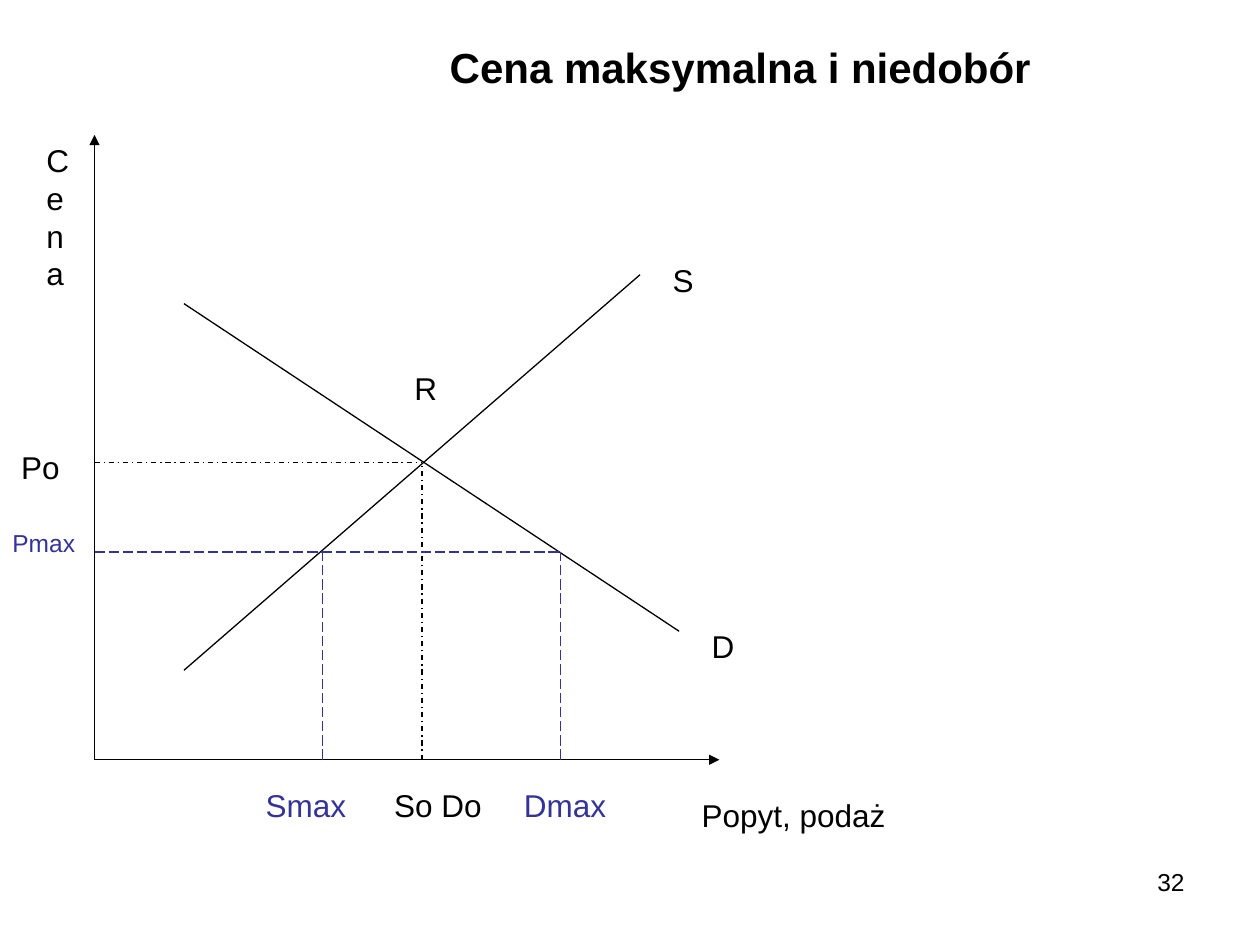
from dataclasses import dataclass

from lxml.etree import SubElement
from pptx import Presentation
from pptx.dml.color import RGBColor
from pptx.enum.dml import MSO_LINE
from pptx.enum.shapes import MSO_CONNECTOR
from pptx.enum.text import MSO_ANCHOR, PP_ALIGN
from pptx.oxml.ns import qn
from pptx.util import Inches, Pt


@dataclass(frozen=True)
class Theme:
    font: str = "Arial"
    ink: str = "000000"
    accent: str = "333399"
    title: int = 24
    body: int = 18
    small: int = 14
    stroke: float = 0.75


THEME = Theme()

# Quantities (x) and prices (y) that the diagram is built on, in inches
ORIGIN_X, ORIGIN_Y = 0.75, 6.03
SUPPLIED, BALANCE, DEMANDED = 2.56, 3.35, 4.45
BALANCE_PRICE, MAX_PRICE = 3.67, 4.38
TICK_TOP, LABEL_HEIGHT = 6.19, 0.4

# Content: start, end of every line
AXES = [
    ((ORIGIN_X, ORIGIN_Y), (ORIGIN_X, 1.07)),
    ((ORIGIN_X, ORIGIN_Y), (5.71, ORIGIN_Y)),
]
CURVES = [
    ((1.46, 5.32), (5.08, 2.18)),  # supply
    ((1.46, 2.41), (5.39, 5.01)),  # demand
]
# Content: price, quantities dropped to the axis, colour, dash
GUIDES = [
    (BALANCE_PRICE, [BALANCE], THEME.ink, MSO_LINE.DASH_DOT),
    (MAX_PRICE, [SUPPLIED, DEMANDED], THEME.accent, MSO_LINE.LONG_DASH),
]
# Content: text, left, top, width, height, colour, size
LABELS = [
    (" Po", 0, 3.51, 0.59, LABEL_HEIGHT, THEME.ink, THEME.body),
    ("Pmax", 0, 4.14, 0.75, 0.33, THEME.accent, THEME.small),
    ("Cena", 0.27, 1.07, 0.32, 1.3, THEME.ink, THEME.body),
    ("Popyt, podaż", 5.47, 6.27, 2.13, LABEL_HEIGHT, THEME.ink, THEME.body),
    ("S", 5.24, 2.02, 0.47, LABEL_HEIGHT, THEME.ink, THEME.body),
    ("D", 5.55, 4.93, 0.55, LABEL_HEIGHT, THEME.ink, THEME.body),
    ("R", 3.19, 2.88, 0.39, LABEL_HEIGHT, THEME.ink, THEME.body),
    ("Smax", 2.01, TICK_TOP, 0.87, LABEL_HEIGHT, THEME.accent, THEME.body),
    ("So Do", 3.03, TICK_TOP, 0.94, LABEL_HEIGHT, THEME.ink, THEME.body),
    ("Dmax", 4.06, TICK_TOP, 1.18, LABEL_HEIGHT, THEME.accent, THEME.body),
]
TITLE = "Cena maksymalna i niedobór"
PAGE_NUMBER = ("32", 7.17, 6.83, 2.33, 0.52, THEME.ink, THEME.small)


def apply(target, formats):
    for name, value in formats.items():
        setattr(target, name, value)


def add_run(paragraph, text, size, color=THEME.ink, bold=False):
    run = paragraph.add_run()
    run.text = text
    apply(run.font, {"name": THEME.font, "size": Pt(size), "bold": bold})
    run.font.color.rgb = RGBColor.from_string(color)


def add_label(slide, text, left, top, width, height, color, size, align=PP_ALIGN.LEFT):
    label = slide.shapes.add_textbox(*map(Inches, (left, top, width, height)))
    label.text_frame.word_wrap = True
    paragraph = label.text_frame.paragraphs[0]
    paragraph.alignment = align
    add_run(paragraph, text, size, color)


def add_line(slide, start, end, color=THEME.ink, dash=None, arrow=False):
    connector = slide.shapes.add_connector(
        MSO_CONNECTOR.STRAIGHT, *map(Inches, (*start, *end)))
    apply(connector.line, {"width": Pt(THEME.stroke), "dash_style": dash})
    connector.line.color.rgb = RGBColor.from_string(color)
    properties = connector._element.spPr
    if arrow:
        SubElement(properties.find(qn("a:ln")), qn("a:tailEnd"), type="triangle")
    SubElement(properties, qn("a:effectLst"))


def add_title(slide):
    title = slide.shapes.title
    apply(title, {"left": Inches(2.8), "top": Inches(0.28),
                  "width": Inches(6.22), "height": Inches(0.5)})
    apply(title.text_frame, {"word_wrap": True, "vertical_anchor": MSO_ANCHOR.TOP})
    paragraph = title.text_frame.paragraphs[0]
    paragraph.alignment = PP_ALIGN.CENTER
    add_run(paragraph, TITLE, THEME.title, bold=True)
    add_run(paragraph, " ", THEME.body)


def main():
    deck = Presentation()
    apply(deck, {"slide_width": Inches(10), "slide_height": Inches(7.5)})
    slide = deck.slides.add_slide(deck.slide_layouts[5])
    add_title(slide)

    # Axes and curves
    for start, end in AXES:
        add_line(slide, start, end, arrow=True)
    for start, end in CURVES:
        add_line(slide, start, end)

    # Each price reaches its furthest quantity, then drops to the axis
    for price, quantities, color, dash in GUIDES:
        add_line(slide, (ORIGIN_X, price), (max(quantities), price), color, dash)
        for quantity in quantities:
            add_line(slide, (quantity, ORIGIN_Y), (quantity, price), color, dash)

    # Labels and page number
    for label in LABELS:
        add_label(slide, *label)
    add_label(slide, *PAGE_NUMBER, align=PP_ALIGN.RIGHT)

    deck.save("out.pptx")


if __name__ == "__main__":
    main()
